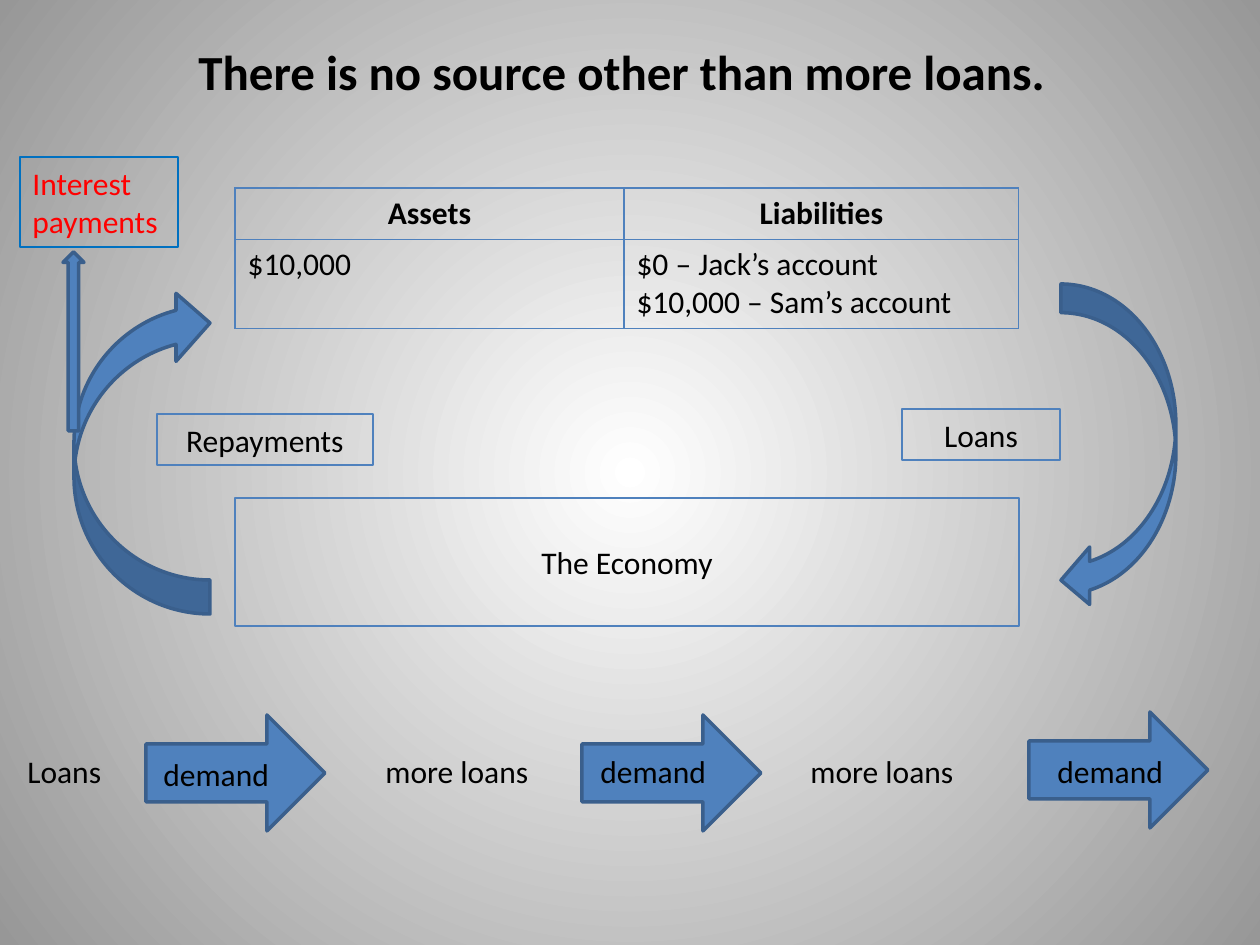
"""Build the slide showing how loans circulate between a bank and the economy."""
from dataclasses import dataclass

import lxml.etree
import pptx
import pptx.dml.color
import pptx.enum.shapes
import pptx.enum.text
import pptx.oxml.ns
import pptx.util

SCALE = 914400 / 126
FONT = "Calibri"
COLORS = {
    "text": "000000",
    "interest": "FF0000",
    "interest_line": "0070C0",
    "blue": "4F81BD",
    "arrow_line": "3A5F8C",
    "center": "FFFFFF",
    "edge": "979797",
}
SHAPE = pptx.enum.shapes.MSO_SHAPE
ALIGN = pptx.enum.text.PP_ALIGN
ANCHOR = pptx.enum.text.MSO_ANCHOR
qn = pptx.oxml.ns.qn


@dataclass(frozen=True)
class Box:
    x: int
    y: int
    w: int
    h: int

    def emu(self) -> list[int]:
        return [px(v) for v in (self.x, self.y, self.w, self.h)]


@dataclass(frozen=True)
class Arrow:
    kind: SHAPE
    box: Box
    rotation: int = 0


@dataclass(frozen=True)
class Label:
    text: str
    box: Box
    line: str | None = "blue"
    color: str = "text"
    align: ALIGN = ALIGN.CENTER


ARROWS = [
    Arrow(SHAPE.RIGHT_ARROW, Box(146, 715, 179, 116)),
    Arrow(SHAPE.RIGHT_ARROW, Box(582, 715, 179, 116)),
    Arrow(SHAPE.RIGHT_ARROW, Box(1029, 712, 179, 116)),
    Arrow(SHAPE.CURVED_LEFT_ARROW, Box(1061, 284, 115, 325)),
    Arrow(SHAPE.CURVED_LEFT_ARROW, Box(74, 289, 136, 325), 180),
    Arrow(SHAPE.UP_ARROW, Box(63, 252, 21, 179)),
]
LABELS = [
    Label("The Economy", Box(235, 498, 784, 128)),
    Label("Loans", Box(902, 409, 158, 51)),
    Label("Repayments", Box(157, 414, 216, 51)),
    Label("Interest payments", Box(20, 157, 158, 90), "interest_line", "interest", ALIGN.LEFT),
    Label("Loans", Box(15, 745, 189, 51), None, align=ALIGN.LEFT),
    Label("more loans", Box(373, 745, 210, 51), None, align=ALIGN.LEFT),
    Label("more loans", Box(798, 745, 210, 51), None, align=ALIGN.LEFT),
    Label("demand", Box(151, 748, 146, 51), None, align=ALIGN.LEFT),
    Label("demand", Box(588, 745, 146, 51), None, align=ALIGN.LEFT),
    Label("demand", Box(1045, 745, 146, 51), None, align=ALIGN.LEFT),
]
BALANCE_BOX = Box(235, 188, 784, 140)
BALANCE_COLUMNS = [389, 395]
BALANCE_ROWS = [51, 89]
BALANCE = [
    [["Assets"], ["Liabilities"]],
    [["$10,000"], ["$0 – Jack’s account", "$10,000 – Sam’s account"]],
]


def px(value: int) -> int:
    return round(value * SCALE)


def rgb(name: str) -> pptx.dml.color.RGBColor:
    return pptx.dml.color.RGBColor.from_string(COLORS[name])


def write(tf, lines: list[str], align: ALIGN, color: str = "text",
          size: int = 18, bold: bool = False) -> None:
    tf.word_wrap = True
    for i, line in enumerate(lines):
        p = tf.add_paragraph() if i else tf.paragraphs[0]
        p.alignment = align
        r = p.add_run()
        r.text = line
        r.font.name = FONT
        r.font.size = pptx.util.Pt(size)
        r.font.bold = bold
        r.font.color.rgb = rgb(color)


def paint_background(s) -> None:
    fill = s.background.fill
    fill.gradient()
    for stop, name in zip(fill.gradient_stops, ("center", "edge")):
        stop.color.rgb = rgb(name)
    grad = s.element.find(f".//{qn('a:gradFill')}")
    grad.remove(grad.find(qn("a:lin")))
    circle = lxml.etree.SubElement(grad, qn("a:path"), path="circle")
    lxml.etree.SubElement(circle, qn("a:fillToRect"), l="50000", t="50000", r="50000", b="50000")


def set_title(s, text: str) -> None:
    sp = s.shapes.title
    sp.left, sp.top, sp.width, sp.height = Box(131, 35, 992, 72).emu()
    sp.text_frame.vertical_anchor = ANCHOR.MIDDLE
    write(sp.text_frame, [text], ALIGN.CENTER, size=28, bold=True)


def add_arrow(s, arrow: Arrow) -> None:
    sp = s.shapes.add_shape(arrow.kind, *arrow.box.emu())
    sp.shadow.inherit = False
    sp.rotation = arrow.rotation
    sp.fill.solid()
    sp.fill.fore_color.rgb = rgb("blue")
    sp.line.color.rgb = rgb("arrow_line")
    sp.line.width = pptx.util.Pt(2)


def add_label(s, label: Label) -> None:
    if label.line:
        sp = s.shapes.add_shape(SHAPE.RECTANGLE, *label.box.emu())
        sp.shadow.inherit = False
        sp.fill.background()
        sp.line.color.rgb = rgb(label.line)
        sp.line.width = pptx.util.Pt(0.75)
    else:
        sp = s.shapes.add_textbox(*label.box.emu())
    sp.text_frame.vertical_anchor = ANCHOR.MIDDLE
    write(sp.text_frame, [label.text], label.align, label.color)


def set_borders(cell) -> None:
    props = cell._tc.get_or_add_tcPr()
    for i, side in enumerate(("lnL", "lnR", "lnT", "lnB")):
        ln = lxml.etree.Element(qn(f"a:{side}"), w=str(pptx.util.Pt(0.75)))
        solid = lxml.etree.SubElement(ln, qn("a:solidFill"))
        lxml.etree.SubElement(solid, qn("a:srgbClr"), val=COLORS["blue"])
        props.insert(i, ln)


def add_balance_sheet(s) -> None:
    table = s.shapes.add_table(len(BALANCE_ROWS), len(BALANCE_COLUMNS), *BALANCE_BOX.emu()).table
    table.first_row = table.horz_banding = False
    for column, width in zip(table.columns, BALANCE_COLUMNS):
        column.width = px(width)
    for i, (row, height) in enumerate(zip(table.rows, BALANCE_ROWS)):
        row.height = px(height)
        for cell, lines in zip(row.cells, BALANCE[i]):
            cell.fill.background()
            set_borders(cell)
            header = i == 0
            write(cell.text_frame, lines, ALIGN.CENTER if header else ALIGN.LEFT, bold=header)


def main() -> None:
    prs = pptx.Presentation()
    prs.slide_width, prs.slide_height = px(1260), px(945)
    s = prs.slides.add_slide(prs.slide_layouts[5])
    paint_background(s)
    set_title(s, "There is no source other than more loans. ")
    add_balance_sheet(s)
    for arrow in ARROWS:
        add_arrow(s, arrow)
    for label in LABELS:
        add_label(s, label)
    prs.save("out.pptx")


if __name__ == "__main__":
    main()
